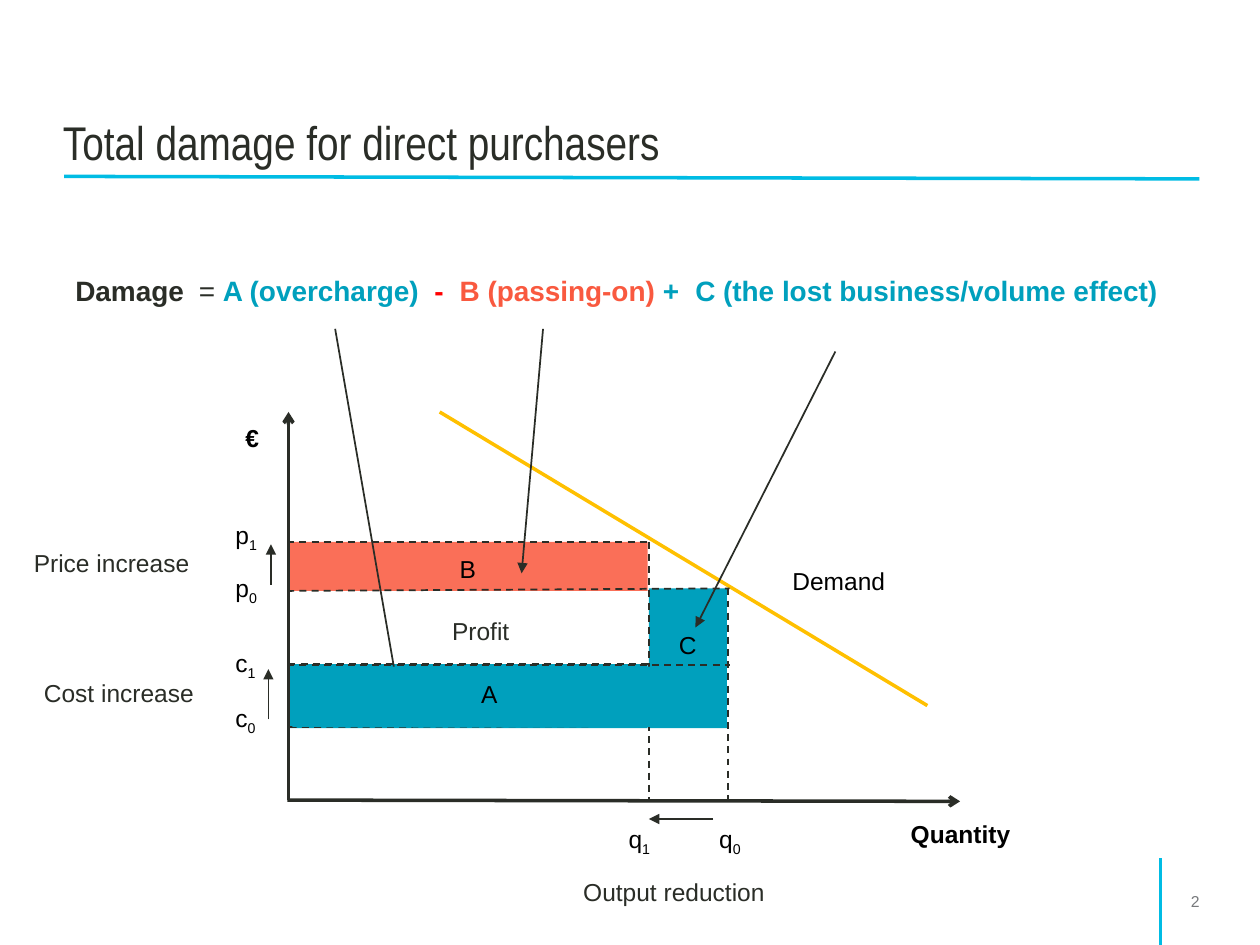
from lxml import etree
from pptx import Presentation
from pptx.dml.color import RGBColor
from pptx.enum import dml, shapes, text
from pptx.oxml import ns
from pptx.util import Inches, Pt

INK, BLACK, GREY = "2A2D27", "000000", "77797C"
TEAL, CORAL, SKY, GOLD = "00A0BD", "FA6F58", "00BCE4", "FFC000"

deck = Presentation()
deck.slide_width, deck.slide_height = Inches(10), Inches(7.5)
page = deck.slides.add_slide(deck.slide_layouts[6])


def color(value):
    return RGBColor.from_string(value)


def add_text(place, runs, size=14, font="Arial", wrap=True, tabs=()):
    """Each run is (wording, colour, bold, subscript)."""
    box = page.shapes.add_textbox(*map(Inches, place))
    box.text_frame.word_wrap = wrap
    para = box.text_frame.paragraphs[0]
    if tabs:
        stops = etree.SubElement(para._p.get_or_add_pPr(), ns.qn("a:tabLst"))
        for stop in tabs:
            etree.SubElement(stops, ns.qn("a:tab"), pos=str(Inches(stop)), algn="l")
    for wording, tone, bold, subscript in runs:
        span = para.add_run()
        span.text = wording
        span.font.name, span.font.size, span.font.bold = font, Pt(size), bold
        span.font.color.rgb = color(tone)
        if subscript:
            span.font._element.set("baseline", "-25000")
    return box


# Damage areas: C, B, A below the profit area, then A in full
areas = [
    (5.15, 4.67, 0.62, 1.11, TEAL),
    (2.28, 4.3, 2.86, 0.39, CORAL),
    (2.28, 5.27, 2.86, 0.51, TEAL),
]
full_overcharge = (2.32, 5.29, 3.45, 0.48, TEAL)

# Lines: x1, y1, x2, y2, colour, width, dashed, arrowhead
lines = [
    # Page rules
    (0.51, 1.4, 9.52, 1.42, SKY, 2, False, None),
    (9.21, 6.81, 9.21, 7.5, SKY, 2, False, None),
    # Demand curve
    (3.49, 3.27, 7.36, 5.6, GOLD, 2, False, None),
    # Axes
    (2.29, 6.35, 2.29, 3.27, INK, 2, False, "arrow"),
    (2.28, 6.35, 7.62, 6.36, INK, 2, False, "arrow"),
    # Price, cost and quantity levels
    (2.28, 4.3, 5.14, 4.3, INK, 1, True, None),
    (2.28, 4.69, 5.79, 4.67, INK, 1, True, None),
    (2.29, 5.27, 5.15, 5.27, INK, 1, True, None),
    (2.28, 5.28, 5.79, 5.28, INK, 1, True, None),
    (2.3, 5.77, 5.78, 5.76, INK, 1, True, None),
    (5.15, 4.3, 5.15, 6.36, INK, 1, True, None),
    (5.78, 4.67, 5.78, 6.36, INK, 1, True, None),
    # Pointers from the formula to the areas
    (2.66, 2.61, 3.15, 5.43, INK, 1, False, "triangle"),
    (4.31, 2.61, 4.14, 4.55, INK, 1, False, "triangle"),
    (6.63, 2.79, 5.52, 4.98, INK, 1, False, "triangle"),
    # Directions of change
    (2.15, 4.64, 2.15, 4.32, INK, 0.75, False, "triangle"),
    (2.13, 5.71, 2.13, 5.31, INK, 0.75, False, "triangle"),
    (5.66, 6.5, 5.15, 6.5, INK, 0.75, False, "triangle"),
]

# Draw areas and lines, with the full overcharge area on top
for item in areas + lines + [full_overcharge]:
    start = [Inches(value) for value in item[:4]]
    if len(item) == 5:
        area = page.shapes.add_shape(shapes.MSO_SHAPE.RECTANGLE, *start)
        area.shadow.inherit = False
        area.fill.solid()
        area.fill.fore_color.rgb = color(item[4])
        area.line.fill.background()
        continue
    tone, width, dashed, arrowhead = item[4:]
    line = page.shapes.add_connector(shapes.MSO_CONNECTOR.STRAIGHT, *start)
    line.line.color.rgb = color(tone)
    line.line.width = Pt(width)
    if dashed:
        line.line.dash_style = dml.MSO_LINE.DASH
    if arrowhead:
        etree.SubElement(line.line._get_or_add_ln(), ns.qn("a:tailEnd"), type=arrowhead)
    etree.SubElement(line._element.spPr, ns.qn("a:effectLst"))

# Title
title = add_text((0.5, 0.3, 9, 1.1),
                 [("Total damage for direct purchasers", INK, False, False)],
                 27, "Arial Narrow").text_frame
title.vertical_anchor = text.MSO_ANCHOR.BOTTOM
title.margin_left, title.margin_right = 0, Inches(0.04)

# Damage formula
formula = [
    ("Damage", INK, True, False),
    ("\t= ", INK, False, False),
    ("A (overcharge)", TEAL, True, False),
    ("\t-", "FF0000", True, False),
    ("\tB (passing-on) ", "F9593F", True, False),
    ("+\tC (the lost business/volume effect)", TEAL, True, False),
]
add_text((0.5, 2.12, 9, 0.67), formula, 16, tabs=(0.98, 2.85, 3.05, 4.92))

# Axis and curve names
for wording, left, top, width, bold in [
    ("€", 1.85, 3.31, 0.4, True),
    ("Quantity", 7.13, 6.45, 1.13, True),
    ("Demand", 6.19, 4.44, 1.51, False),
]:
    add_text((left, top, width, 0.35), [(wording, BLACK, bold, False)])

# Levels with subscripts
for letter, index, left, top in [
    ("p", "1", 1.77, 4.08), ("p", "0", 1.77, 4.5),
    ("c", "1", 1.77, 5.09), ("c", "0", 1.77, 5.53),
    ("q", "1", 4.89, 6.49), ("q", "0", 5.61, 6.49),
]:
    add_text((left, top, 0.56, 0.34),
             [(letter, BLACK, False, False), (index, BLACK, False, True)])

# Area letters and captions
for wording, left, top, width, tone in [
    ("A", 3.72, 5.34, 0.35, BLACK),
    ("B", 3.55, 4.35, 0.35, BLACK),
    ("C", 5.29, 4.95, 0.36, BLACK),
    ("Profit", 3.49, 4.84, 0.66, INK),
    ("Price increase", 0.17, 4.3, 1.44, INK),
    ("Cost increase", 0.25, 5.33, 1.4, INK),
    ("Output reduction", 4.53, 6.91, 1.65, INK),
]:
    add_text((left, top, width, 0.34), [(wording, tone, False, False)], wrap=False)

# Page number
number = add_text((7.9, 7.03, 1.62, 0.25), [("2", GREY, False, False)], 9).text_frame
number.margin_right = 0
number.paragraphs[0].alignment = text.PP_ALIGN.RIGHT

deck.save("out.pptx")
